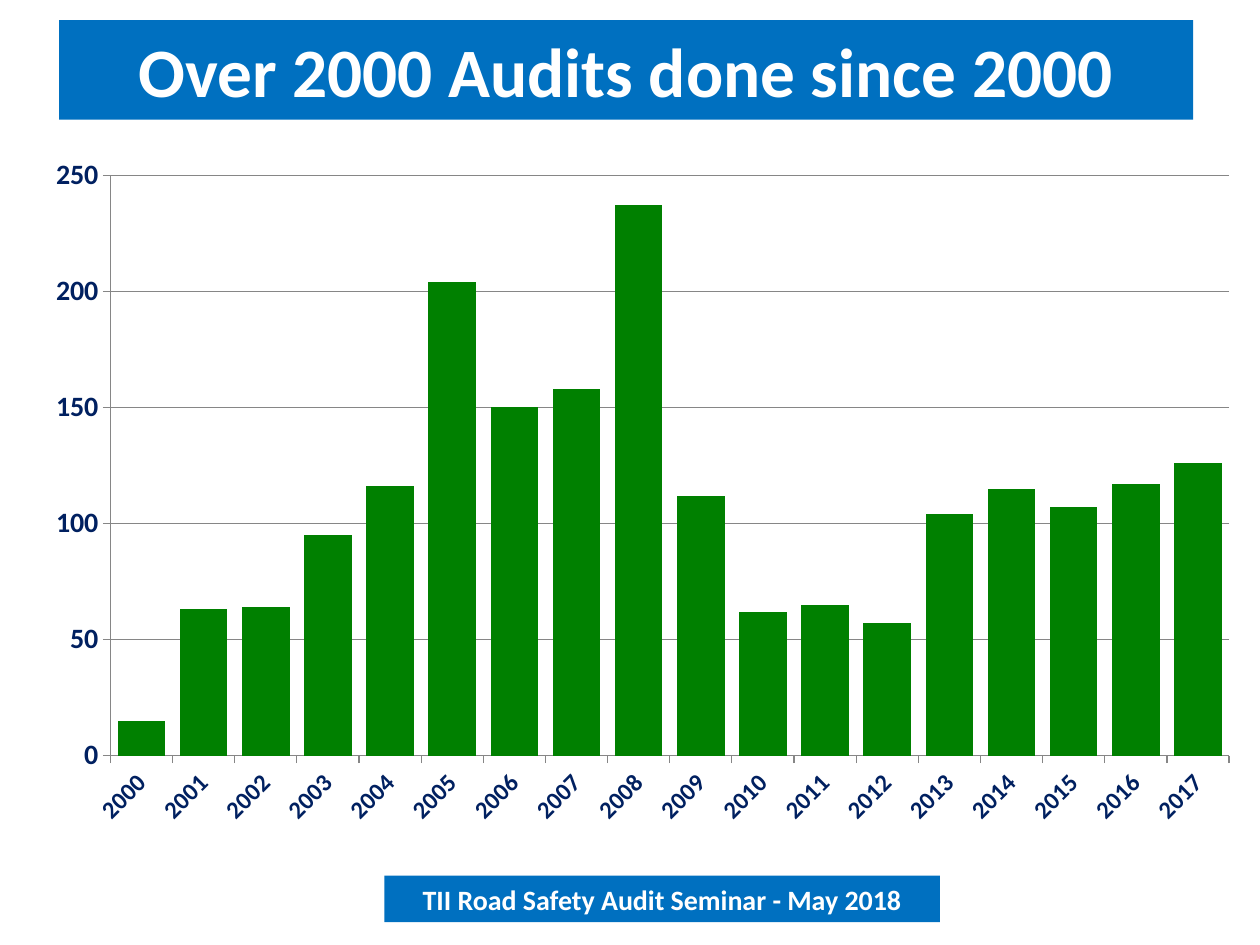
"""Build the slide charting road safety audits per year."""
from dataclasses import dataclass

from lxml import etree
from pptx import Presentation
from pptx.chart.data import CategoryChartData
from pptx.dml.color import RGBColor
from pptx.enum.chart import XL_CHART_TYPE, XL_TICK_MARK
from pptx.enum.shapes import MSO_SHAPE
from pptx.enum.text import MSO_ANCHOR, MSO_AUTO_SIZE, PP_ALIGN
from pptx.oxml.ns import qn
from pptx.util import Pt

COLUMNS = XL_CHART_TYPE.COLUMN_CLUSTERED
TICK_OUTSIDE = XL_TICK_MARK.OUTSIDE
RECTANGLE = MSO_SHAPE.RECTANGLE
MIDDLE = MSO_ANCHOR.MIDDLE
NO_AUTOFIT = MSO_AUTO_SIZE.NONE
CENTER = PP_ALIGN.CENTER


@dataclass(frozen=True)
class Theme:
    font: str = "Calibri"
    banner: RGBColor = RGBColor(0x00, 0x70, 0xC0)
    banner_text: RGBColor = RGBColor(0xFF, 0xFF, 0xFF)
    bar: RGBColor = RGBColor(0x00, 0x80, 0x00)
    label: RGBColor = RGBColor(0x00, 0x20, 0x60)
    rule: RGBColor = RGBColor(0x86, 0x86, 0x86)
    title_size: float = 39.6
    footer_size: float = 16
    year_size: float = 14
    count_size: float = 16


THEME = Theme()


def style_font(font, size, color):
    font.name = THEME.font
    font.size = Pt(size)
    font.bold = True
    font.color.rgb = color


def fill_banner(banner, text, size):
    banner.fill.solid()
    banner.fill.fore_color.rgb = THEME.banner
    banner.line.fill.background()
    frame = banner.text_frame
    frame.word_wrap = True
    frame.auto_size = NO_AUTOFIT
    frame.vertical_anchor = MIDDLE
    paragraph = frame.paragraphs[0]
    paragraph.alignment = CENTER
    run = paragraph.add_run()
    run.text = text
    style_font(run.font, size, THEME.banner_text)


presentation = Presentation()
presentation.slide_width = Pt(720)
presentation.slide_height = Pt(540)
slide = presentation.slides.add_slide(presentation.slide_layouts[5])

footer = slide.shapes.add_shape(RECTANGLE, Pt(219.6), Pt(500.4), Pt(317.5), Pt(26.6))
footer.shadow.inherit = False
fill_banner(footer, "TII Road Safety Audit Seminar - May 2018", THEME.footer_size)

title = slide.shapes.title
title.left, title.top, title.width, title.height = Pt(33.8), Pt(11.5), Pt(648), Pt(56.9)
fill_banner(title, "Over 2000 Audits done since 2000", THEME.title_size)

audits_per_year = [15, 63, 64, 95, 116, 204, 150, 158, 237,
                   112, 62, 65, 57, 104, 115, 107, 117, 126]
audit_data = CategoryChartData(number_format="0")
audit_data.categories = [str(year) for year in range(2000, 2018)]
audit_data.add_series("Series 1", audits_per_year)
chart = slide.shapes.add_chart(
    COLUMNS, Pt(22.3), Pt(84.2), Pt(680.4), Pt(399.6), audit_data
).chart
chart.has_legend = False
chart.has_title = False
chart.font.name = THEME.font

bars = chart.plots[0]
bars.gap_width = 31
bars.vary_by_categories = False
bars.series[0].format.fill.solid()
bars.series[0].format.fill.fore_color.rgb = THEME.bar

years, counts = chart.category_axis, chart.value_axis
for axis, size in ((years, THEME.year_size), (counts, THEME.count_size)):
    axis.major_tick_mark = TICK_OUTSIDE
    axis.format.line.color.rgb = THEME.rule
    axis.format.line.width = Pt(0.75)
    style_font(axis.tick_labels.font, size, THEME.label)
years._element.find(qn("c:txPr")).find(qn("a:bodyPr")).set("rot", "-2700000")
counts.minimum_scale = 0
counts.maximum_scale = 250
counts.major_unit = 50
counts.tick_labels.number_format = "0"
counts.tick_labels.number_format_is_linked = False
counts.has_major_gridlines = True
counts.major_gridlines.format.line.color.rgb = THEME.rule
counts.major_gridlines.format.line.width = Pt(0.75)

plot_area = chart._chartSpace.chart.plotArea
for old_layout in plot_area.findall(qn("c:layout")):
    plot_area.remove(old_layout)
layout = etree.Element(qn("c:layout"))
manual = etree.SubElement(layout, qn("c:manualLayout"))
for tag, value in (
    ("layoutTarget", "inner"), ("xMode", "edge"), ("yMode", "edge"),
    ("x", "0.06"), ("y", "0.04"), ("w", "0.94"), ("h", "0.83"),
):
    etree.SubElement(manual, qn(f"c:{tag}")).set("val", value)
plot_area.insert(0, layout)

presentation.save("out.pptx")
